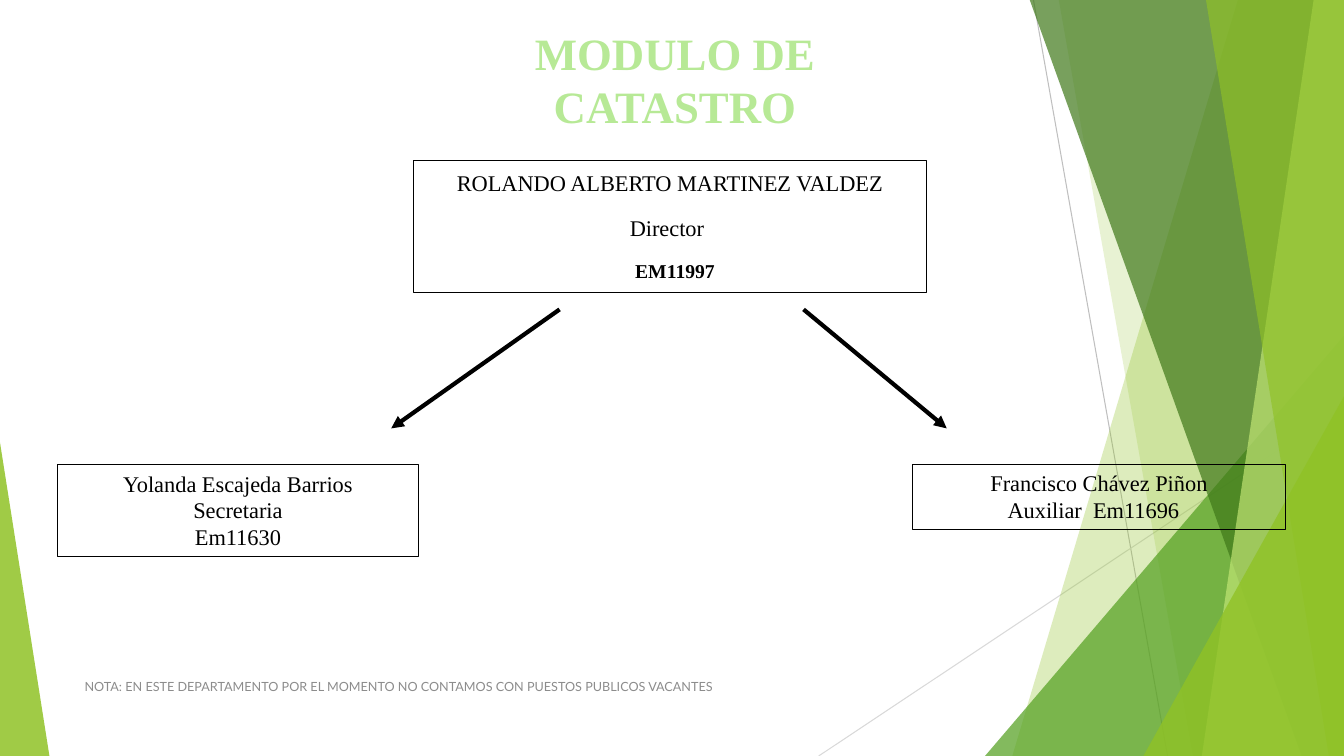
import pptx
import pptx.util
import pptx.dml.color
import pptx.enum.shapes
import pptx.enum.text
import pptx.oxml
import pptx.oxml.ns
from pptx.util import Inches, Pt

PP_ALIGN = pptx.enum.text.PP_ALIGN
ANCHOR = pptx.enum.text.MSO_ANCHOR
SHAPE = pptx.enum.shapes.MSO_SHAPE
qn = pptx.oxml.ns.qn

# ---- Content ----
TITLE = "MODULO DE CATASTRO"
NOTE = "NOTA: EN ESTE DEPARTAMENTO POR EL MOMENTO NO CONTAMOS CON PUESTOS PUBLICOS VACANTES"

# Each person: box, line spacing, space after, lines of
# (text, size role, bold, left indent, right indent)
PEOPLE = [
    ((4.1, 1.59, 5.09, 1.31), 1.15, 10, [
        ("ROLANDO ALBERTO MARTINEZ VALDEZ", "person", False, 0, 0),
        ("Director", "person", False, 0, 0.06),
        ("EM11997", "code", True, 0.1, 0)]),
    ((0.57, 4.61, 3.58, 0.91), 1, 0, [
        ("Yolanda Escajeda Barrios", "person", False, 0, 0),
        ("Secretaria", "person", False, 0, 0),
        ("Em11630", "person", False, 0, 0)]),
    ((9.05, 4.61, 3.7, 0.64), 1, 0, [
        ("Francisco Chávez Piñon", "person", False, 0, 0),
        ("Auxiliar  Em11696", "person", False, 0, 0.11)]),
]
ARROWS = [((5.55, 3.07), (3.88, 4.25)), ((7.97, 3.07), (9.39, 4.25))]

# ---- Theme ----
THEME = {
    "ink": "000000", "title": "B7E996", "title edge": "54A021", "note": "8C8C8C",
    "lime": "90C226", "green": "54A021", "forest": "3F7819", "pale": "C0E474",
    "serif": "Times New Roman", "sans": "Lato",
    "size": {"title": 32, "person": 16, "code": 14, "note": 9},
}

# ---- Decoration, back to front ----
WIDTH, HEIGHT, TOP = 13.33, 7.5, -0.01
HAIRLINES = [((10.25, 0), (11.58, HEIGHT), "BFBFBF"),
             ((WIDTH, 4.03), (8.12, HEIGHT), "D9D9D9")]
# band: x at top and bottom of its left edge; wedge: left, top, width, apex (0 left, 1 right)
FACETS = [
    ("band", (12.28, 10.04), "lime", 30),
    ("band", (10.5, 11.83), "lime", 20),
    ("wedge", (9.77, 3.33, 3.56, 1), "green", 72),
    ("band", (10.21, 12.91), "forest", 70),
    ("band", (13.03, 11.92), "pale", 70),
    ("band", (11.96, 13.18), "lime", 65),
    ("wedge", (11.34, 3.93, 1.99, 1), "lime", 80),
    ("wedge", (0, 4.39, 0.49, 0), "lime", 85),
]

prs = pptx.Presentation()
prs.slide_width, prs.slide_height = Inches(WIDTH), Inches(HEIGHT)
slide = prs.slides.add_slide(prs.slide_layouts[6])
shapes = slide.shapes


def rgb(value):
    return pptx.dml.color.RGBColor.from_string(value)


def add_line(start, end, color, width, arrow=False):
    line = shapes.add_connector(pptx.enum.shapes.MSO_CONNECTOR.STRAIGHT,
                                *map(Inches, start + end))
    line.line.color.rgb, line.line.width = rgb(color), Pt(width)
    if arrow:
        head = line.line._get_or_add_ln()
        pptx.oxml.ns  # namespace helpers
        head.append(head.makeelement(qn("a:tailEnd"), {"type": "triangle"}))
    props = line._element.spPr
    props.append(props.makeelement(qn("a:effectLst"), {}))


def add_facet(kind, geometry, color, opacity):
    if kind == "band":
        upper, lower = geometry
        builder = shapes.build_freeform(Inches(upper), Inches(TOP))
        corners = [(WIDTH, TOP), (WIDTH, HEIGHT), (lower, HEIGHT)]
        builder.add_line_segments([(Inches(x), Inches(y)) for x, y in corners], close=True)
        facet = builder.convert_to_shape()
    else:
        left, top, width, apex = geometry
        facet = shapes.add_shape(SHAPE.ISOSCELES_TRIANGLE,
                                 *map(Inches, (left, top, width, HEIGHT - top)))
        facet.adjustments[0] = apex
    facet.shadow.inherit = False
    facet.line.fill.background()
    facet.fill.solid()
    facet.fill.fore_color.rgb = rgb(THEME[color])
    tint = facet._element.spPr.find(qn("a:solidFill"))[0]
    tint.append(tint.makeelement(qn("a:alpha"), {"val": str(opacity * 1000)}))


def style(paragraph, role, face, color, bold=False):
    font = paragraph.font
    font.name, font.size = THEME[face], Pt(THEME["size"][role])
    font.color.rgb, font.bold = rgb(THEME[color]), bold


def add_person(box, spacing, after, lines):
    card = shapes.add_shape(SHAPE.RECTANGLE, *map(Inches, box))
    card.shadow.inherit = False
    card.fill.background()
    card.line.color.rgb, card.line.width = rgb(THEME["ink"]), Pt(0.75)
    frame = card.text_frame
    frame.word_wrap, frame.vertical_anchor = True, ANCHOR.TOP
    for index, (text, role, bold, left, right) in enumerate(lines):
        paragraph = frame.add_paragraph() if index else frame.paragraphs[0]
        paragraph.text = text
        paragraph.alignment = PP_ALIGN.CENTER
        paragraph.line_spacing, paragraph.space_after = float(spacing), Pt(after)
        style(paragraph, role, "serif", "ink", bold)
        indents = paragraph._p.get_or_add_pPr()
        indents.set("marL", str(Inches(left)))
        indents.set("marR", str(Inches(right)))


def add_label(text, box, role, face, anchor):
    label = shapes.add_textbox(*map(Inches, box))
    frame = label.text_frame
    frame.word_wrap, frame.vertical_anchor = True, anchor
    frame.text = text
    style(frame.paragraphs[0], role, face, role, role == "title")
    return frame


# Background facets
for start, end, color in HAIRLINES:
    add_line(start, end, color, 0.75)
for facet in FACETS:
    add_facet(*facet)

# Organisation chart
for person in PEOPLE:
    add_person(*person)
for start, end in ARROWS:
    add_line(start, end, THEME["ink"], 3, arrow=True)

# Title with outlined letters
title = add_label(TITLE, (5.16, 0.16, 3.07, 1.72), "title", "serif", ANCHOR.TOP)
title.margin_top = Inches(0.09)
title.paragraphs[0].alignment = PP_ALIGN.CENTER
letters = title.paragraphs[0].runs[0].font._element
edge = letters.makeelement(qn("a:ln"), {"w": str(Pt(1.75))})
edge_fill = edge.makeelement(qn("a:solidFill"), {})
edge_fill.append(edge.makeelement(qn("a:srgbClr"), {"val": THEME["title edge"]}))
edge.append(edge_fill)
letters.insert(0, edge)

# Note
add_label(NOTE, (0.74, 6.61, 6.89, 0.4), "note", "sans", ANCHOR.MIDDLE)

prs.save("out.pptx")
